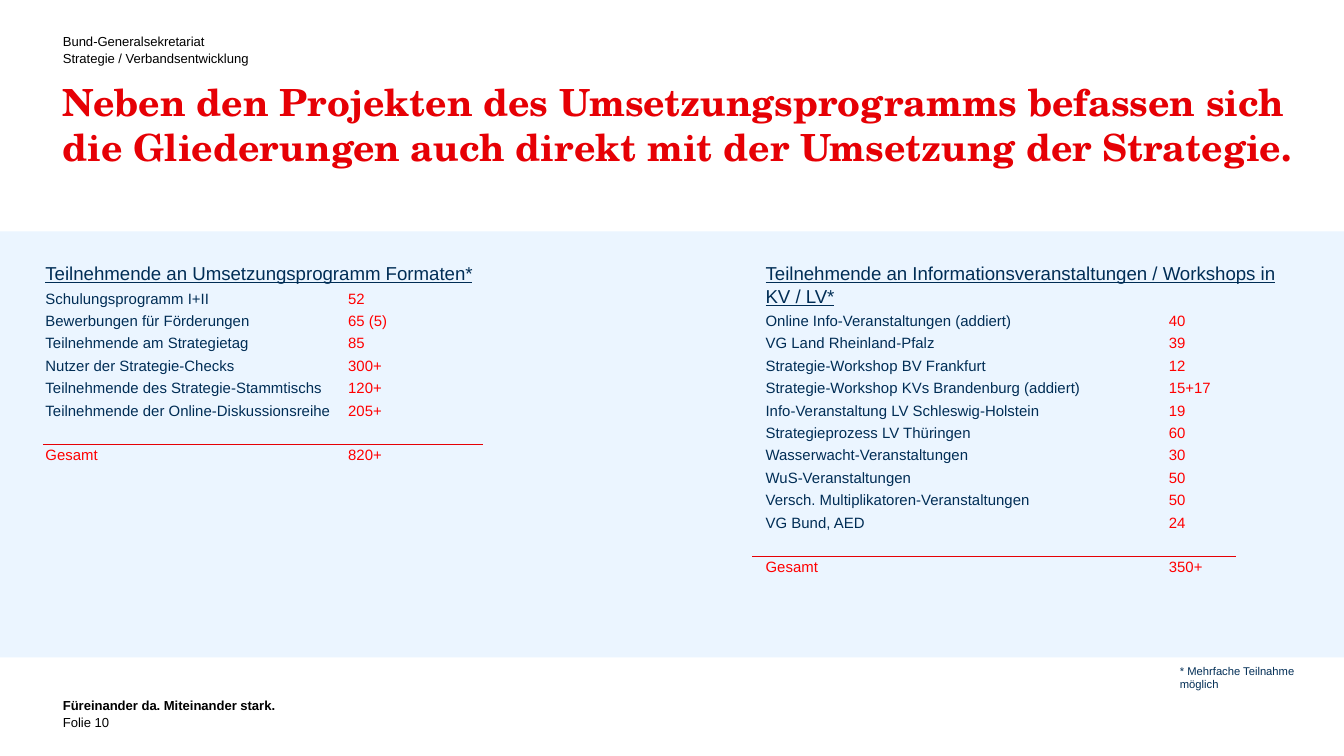
from lxml import etree
from pptx import Presentation
from pptx.dml.color import RGBColor
from pptx.enum.shapes import MSO_CONNECTOR, MSO_SHAPE
from pptx.oxml.ns import qn
from pptx.util import Cm, Pt

RECTANGLE = MSO_SHAPE.RECTANGLE
STRAIGHT = MSO_CONNECTOR.STRAIGHT
BLACK = RGBColor(0x00, 0x00, 0x00)
TITLE_RED = RGBColor(0xE6, 0x00, 0x05)
FIGURE_RED = RGBColor(0xFF, 0x00, 0x00)
NAVY = RGBColor(0x00, 0x2D, 0x55)
PALE_BLUE = RGBColor(0xEB, 0xF5, 0xFF)
MARGIN = Cm(1.19)
ROW_HEIGHT = Pt(12)

FORMATS = [
    ("Schulungsprogramm I+II", "52"),
    ("Bewerbungen für Förderungen", "65 (5)"),
    ("Teilnehmende am Strategietag", "85"),
    ("Nutzer der Strategie-Checks", "300+"),
    ("Teilnehmende des Strategie-Stammtischs", "120+"),
    ("Teilnehmende der Online-Diskussionsreihe", "205+"),
]
EVENTS = [
    ("Online Info-Veranstaltungen (addiert)", "40"),
    ("VG Land Rheinland-Pfalz", "39"),
    ("Strategie-Workshop BV Frankfurt", "12"),
    ("Strategie-Workshop KVs Brandenburg (addiert)", "15+17"),
    ("Info-Veranstaltung LV Schleswig-Holstein", "19"),
    ("Strategieprozess LV Thüringen", "60"),
    ("Wasserwacht-Veranstaltungen", "30"),
    ("WuS-Veranstaltungen", "50"),
    ("Versch. Multiplikatoren-Veranstaltungen", "50"),
    ("VG Bund, AED", "24"),
]


def add_frame(slide, box, inset=True, wrap=True):
    """Add a text box and return its text frame."""
    frame = slide.shapes.add_textbox(*box).text_frame
    frame.word_wrap = wrap
    if not inset:
        frame.margin_left = frame.margin_right = 0
        frame.margin_top = frame.margin_bottom = 0
    return frame


def style(paragraph, size, color, spacing=None, name="Arial", bold=False):
    """Set the font and line spacing of a paragraph."""
    font = paragraph.font
    font.name, font.size, font.bold = name, Pt(size), bold
    font.color.rgb = color
    if spacing:
        paragraph.line_spacing = spacing


def add_small_print(slide, box, lines, bold_first=False):
    """Place the small black lines of the header or footer."""
    frame = add_frame(slide, box, inset=False)
    frame.text = "\n".join(lines)
    for index, paragraph in enumerate(frame.paragraphs):
        style(paragraph, 7, BLACK, Pt(9), bold=bold_first and index == 0)


def add_title(slide, box, title):
    """Place the red headline."""
    frame = add_frame(slide, box, inset=False)
    frame.text = title
    style(frame.paragraphs[0], 20, TITLE_RED, Pt(24), "TeX Gyre Schola", True)


def add_panel(slide, box):
    """Place the pale band behind both lists."""
    panel = slide.shapes.add_shape(RECTANGLE, *box)
    panel.shadow.inherit = False
    panel.fill.solid()
    panel.fill.fore_color.rgb = PALE_BLUE
    panel.line.fill.background()


def add_row(frame, label, figure, figure_tab, label_color):
    """Add a label with its figure at a tab stop."""
    row = frame.add_paragraph()
    tabs = etree.SubElement(row._p.get_or_add_pPr(), qn("a:tabLst"))
    etree.SubElement(tabs, qn("a:tab"), pos=str(figure_tab), algn="l")
    style(row, 8, label_color, ROW_HEIGHT)
    row.add_run().text = label + "\t"
    value = row.add_run()
    value.text = figure
    value.font.color.rgb = FIGURE_RED
    return row


def add_total_rule(slide, left, top, width):
    """Draw the thin red line above a total."""
    rule = slide.shapes.add_connector(STRAIGHT, left, top, left + width, top)
    rule.line.color.rgb = TITLE_RED
    rule.line.width = Pt(0.5)
    etree.SubElement(rule._element.spPr, qn("a:effectLst"))


def add_attendance(slide, box, heading, heading_lines, rows, total,
                   figure_tab, rule_indent, rule_width):
    """Place an attendance list with its heading and total."""
    left, top = box[:2]
    frame = add_frame(slide, box)
    frame.text = heading
    style(frame.paragraphs[0], 10, NAVY, ROW_HEIGHT)
    frame.paragraphs[0].font.underline = True
    for label, figure in rows:
        add_row(frame, label, figure, figure_tab, NAVY)
    total_row = add_row(frame, "Gesamt", total, figure_tab, FIGURE_RED)
    total_row.space_before = ROW_HEIGHT
    rows_above = heading_lines + len(rows) + 1
    rule_top = top + Cm(0.18) + rows_above * ROW_HEIGHT
    add_total_rule(slide, left + rule_indent, rule_top, rule_width)


def add_footnote(slide, box, note):
    """Place the note below the band."""
    frame = add_frame(slide, box, wrap=False)
    frame.text = note
    style(frame.paragraphs[0], 6, NAVY)


def main():
    """Build and save the slide."""
    deck = Presentation()
    deck.slide_width, deck.slide_height = Cm(25.4), Cm(14.28)
    slide = deck.slides.add_slide(deck.slide_layouts[6])
    add_small_print(slide, (MARGIN, Cm(0.61), Cm(4.55), Cm(0.64)),
                    ["Bund-Generalsekretariat", "Strategie / Verbandsentwicklung"])
    add_title(slide, (MARGIN, Cm(1.5), Cm(23.52), Cm(1.24)),
              "Neben den Projekten des Umsetzungsprogramms befassen sich die "
              "Gliederungen auch direkt mit der Umsetzung der Strategie.")
    add_panel(slide, (0, Cm(4.37), deck.slide_width, Cm(8.05)))
    add_attendance(slide, (Cm(0.61), Cm(4.83), Cm(9.96), Cm(4.5)),
                   "Teilnehmende an Umsetzungsprogramm Formaten*", 1,
                   FORMATS, "820+", Cm(5.72), Cm(0.2), Cm(8.31))
    add_attendance(slide, (Cm(14.22), Cm(4.83), Cm(10.82), Cm(7.49)),
                   "Teilnehmende an Informationsveranstaltungen / Workshops in KV / LV*", 2,
                   EVENTS, "350+", Cm(7.62), 0, Cm(9.14))
    add_footnote(slide, (Cm(22.05), Cm(12.42), Cm(3.35), Cm(0.5)),
                 "* Mehrfache Teilnahme möglich")
    add_small_print(slide, (MARGIN, Cm(13.15), Cm(23.01), Cm(0.64)),
                    ["Füreinander da. Miteinander stark.", "Folie 10"], bold_first=True)
    deck.save("out.pptx")


if __name__ == "__main__":
    main()
